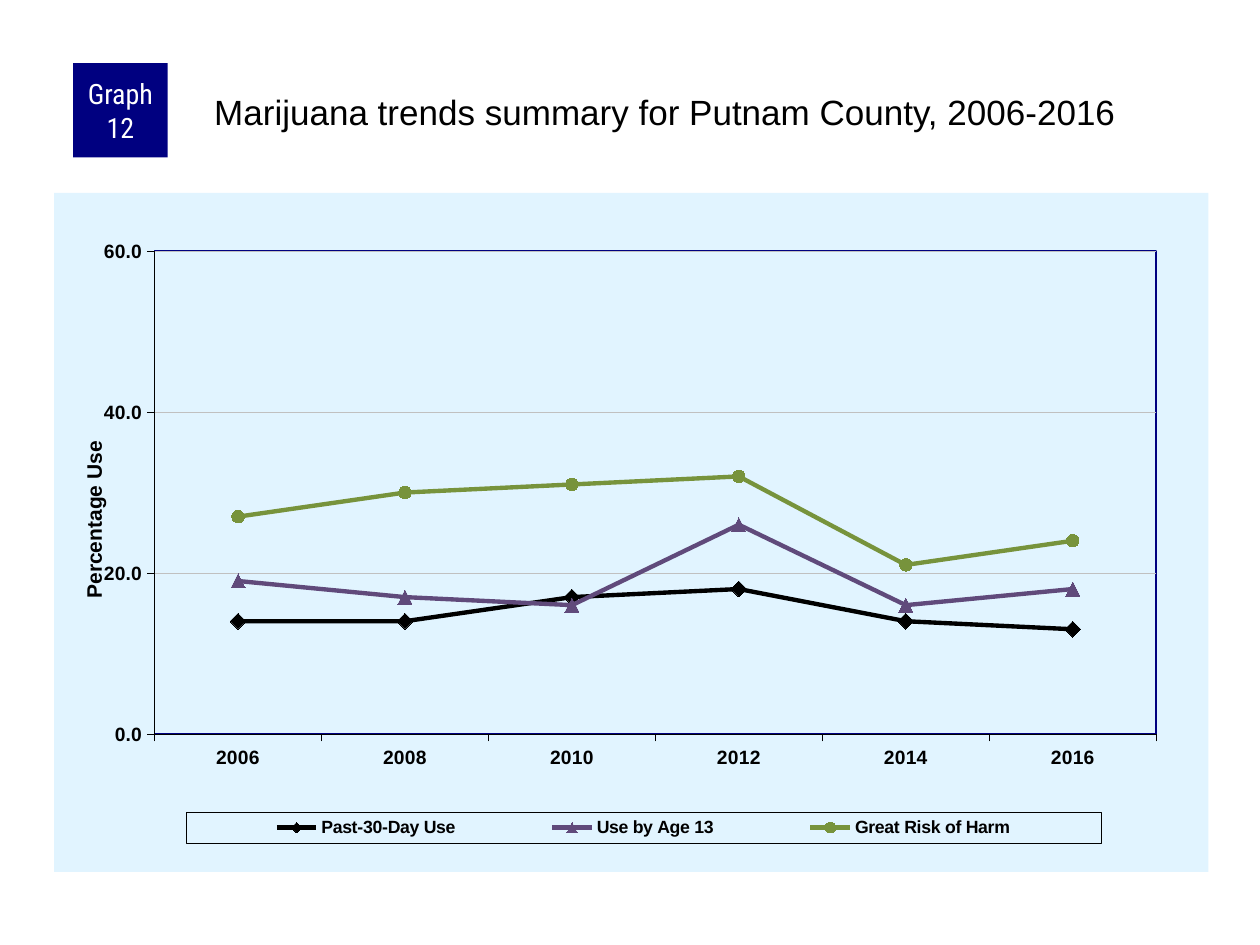
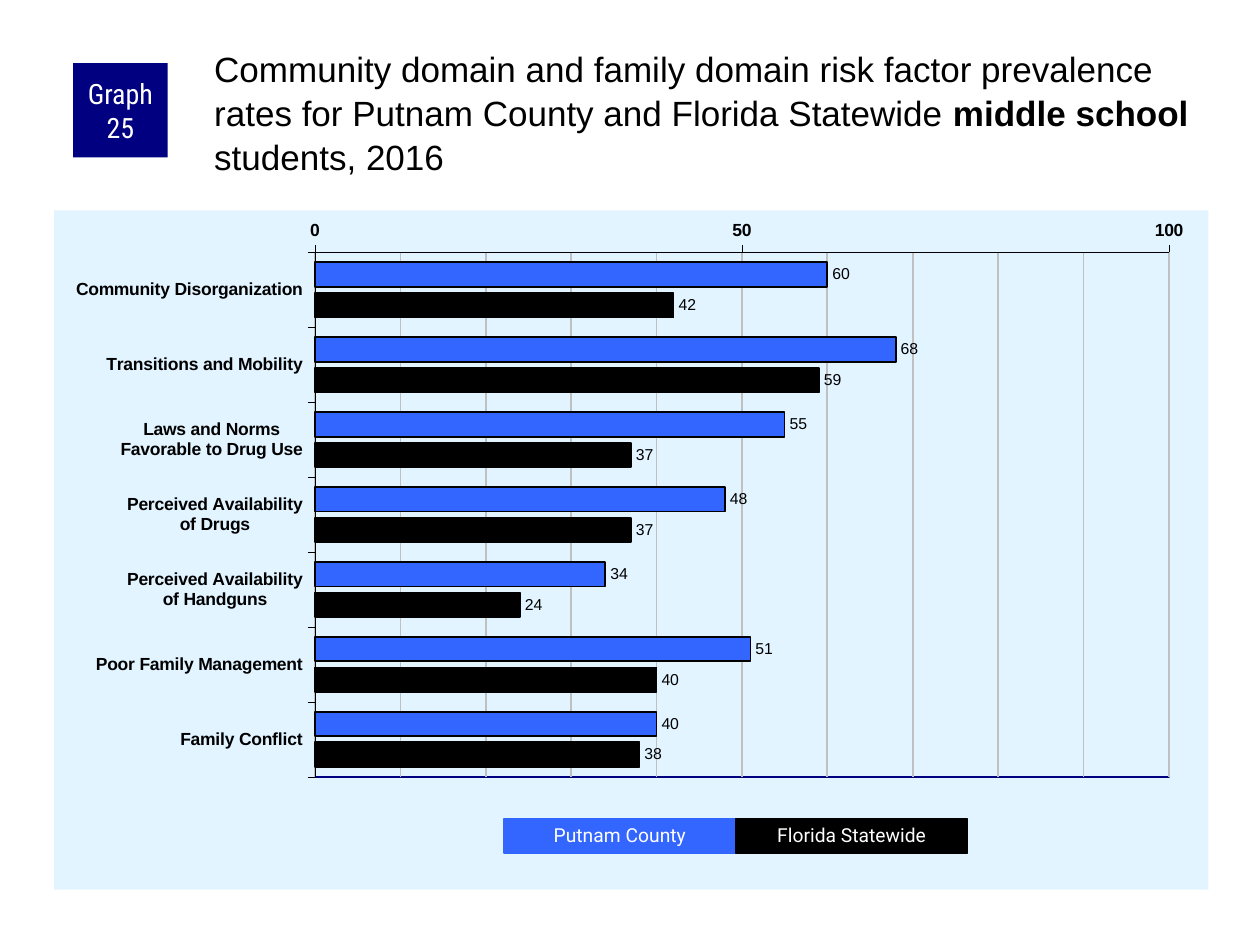
from dataclasses import dataclass

from pptx import Presentation
from pptx.chart.data import CategoryChartData
from pptx.dml.color import RGBColor
from pptx.enum.chart import (XL_AXIS_CROSSES, XL_CHART_TYPE, XL_LABEL_POSITION,
                             XL_LEGEND_POSITION, XL_MARKER_STYLE, XL_TICK_MARK)
from pptx.enum.shapes import MSO_SHAPE
from pptx.enum.text import MSO_ANCHOR, MSO_AUTO_SIZE, PP_ALIGN
from pptx.oxml import parse_xml
from pptx.oxml.ns import nsdecls, qn
from pptx.util import Inches, Pt

LINE_CHART = XL_CHART_TYPE.LINE_MARKERS
BAR_CHART = XL_CHART_TYPE.BAR_CLUSTERED
CROSS_AT_MAXIMUM = XL_AXIS_CROSSES.MAXIMUM
LABEL_OUTSIDE = XL_LABEL_POSITION.OUTSIDE_END
LEGEND_RIGHT = XL_LEGEND_POSITION.RIGHT
DIAMOND = XL_MARKER_STYLE.DIAMOND
TRIANGLE = XL_MARKER_STYLE.TRIANGLE
CIRCLE = XL_MARKER_STYLE.CIRCLE
TICK_OUT = XL_TICK_MARK.OUTSIDE
TICK_NONE = XL_TICK_MARK.NONE
RECTANGLE = MSO_SHAPE.RECTANGLE
TOP = MSO_ANCHOR.TOP
MIDDLE = MSO_ANCHOR.MIDDLE
LEFT = PP_ALIGN.LEFT
CENTER = PP_ALIGN.CENTER
NO_FIT = MSO_AUTO_SIZE.NONE
GROW = MSO_AUTO_SIZE.SHAPE_TO_FIT_TEXT
TITLE_ONLY = 5


@dataclass(frozen=True)
class Theme:
    navy: str = "000080"
    panel: str = "E1F4FF"
    black: str = "000000"
    white: str = "FFFFFF"
    grid: str = "C0C0C0"
    purple: str = "604A7B"
    green: str = "77933C"
    blue: str = "3366FF"
    body_font: str = "Arial"
    badge_font: str = "Roboto Condensed"
    key_font: str = "Roboto"
    title_size: float = 20
    badge_size: float = 16
    axis_title_size: float = 12
    line_axis_size: float = 11
    key_size: float = 11
    legend_size: float = 10.1
    bar_axis_size: float = 10
    label_size: float = 9


THEME = Theme()


def style_font(font, size, color=THEME.black, name=THEME.body_font, bold=False):
    font.size = Pt(size)
    font.name = name
    font.bold = bold
    font.color.rgb = RGBColor.from_string(color)


def style_line(line, color, width):
    line.color.rgb = RGBColor.from_string(color)
    line.width = Pt(width)


def style_fill(fill, color):
    fill.solid()
    fill.fore_color.rgb = RGBColor.from_string(color)


def add_span(para, text, size, color, name, bold=False):
    span = para.add_run()
    span.text = text
    style_font(span.font, size, color, name, bold)


def add_page(deck, number, title_top, title_spans):
    page = deck.slides.add_slide(deck.slide_layouts[TITLE_ONLY])
    title = page.shapes.title
    title.left, title.top = Inches(1.67), Inches(title_top)
    title.width, title.height = Inches(7.92), Inches(0.83)
    frame = title.text_frame
    frame.word_wrap = True
    frame.auto_size = NO_FIT
    frame.vertical_anchor = TOP
    frame.margin_left = frame.margin_top = Inches(0.03)
    frame.margin_right = frame.margin_bottom = 0
    para = frame.paragraphs[0]
    para.alignment = LEFT
    para.line_spacing = 1.05
    for text, bold in title_spans:
        add_span(para, text, THEME.title_size, THEME.black, THEME.body_font, bold)
    add_badge(page, f"Graph {number}")
    return page


def add_box(page, left, top, width, height, color):
    box = page.shapes.add_shape(RECTANGLE, Inches(left), Inches(top),
                                Inches(width), Inches(height))
    box.shadow.inherit = False
    style_fill(box.fill, color)
    frame = box.text_frame
    frame.word_wrap = True
    frame.vertical_anchor = MIDDLE
    frame.paragraphs[0].alignment = CENTER
    return box


def add_badge(page, text):
    badge = add_box(page, 0.58, 0.5, 0.75, 0.75, THEME.navy)
    badge.line.fill.background()
    frame = badge.text_frame
    frame.margin_left = frame.margin_right = Inches(0.05)
    frame.margin_top = frame.margin_bottom = 0
    add_span(frame.paragraphs[0], text, THEME.badge_size, THEME.white, THEME.badge_font)


def add_series_key(page, left, text, color):
    key = add_box(page, left, 6.5, 1.84, 0.27, color)
    style_line(key.line, color, 0.75)
    key.text_frame.auto_size = GROW
    para = key.text_frame.paragraphs[0]
    para.line_spacing = 0.9
    add_span(para, text, THEME.key_size, THEME.white, THEME.key_font)


def set_layout(element, index, left, top, width=None, height=None, inner=False):
    for old in element.findall(qn("c:layout")):
        element.remove(old)
    target = '<c:layoutTarget val="inner"/>' if inner else ""
    modes = '<c:xMode val="edge"/><c:yMode val="edge"/>'
    sizes = zip("xywh", (left, top, width, height))
    values = "".join(f'<c:{tag} val="{value}"/>' for tag, value in sizes
                     if value is not None)
    element.insert(index, parse_xml(
        f'<c:layout {nsdecls("c")}><c:manualLayout>{target}{modes}{values}'
        '</c:manualLayout></c:layout>'))


def shape_properties(fill=None, line=None, width=1):
    def solid(color):
        if color is None:
            return "<a:noFill/>"
        return f'<a:solidFill><a:srgbClr val="{color}"/></a:solidFill>'

    return parse_xml(f'<c:spPr {nsdecls("c", "a")}>{solid(fill)}'
                     f'<a:ln w="{Pt(width)}">{solid(line)}</a:ln></c:spPr>')


def add_panel_chart(page, kind, top, categories, series, plot):
    data = CategoryChartData(number_format="0")
    data.categories = categories
    for name, values in series:
        data.add_series(name, values)
    chart = page.shapes.add_chart(kind, Inches(0.43), Inches(top), Inches(9.16),
                                  Inches(5.39), data).chart
    chart.has_title = False
    chart.has_legend = False
    style_font(chart.font, THEME.label_size)
    body = chart.element.find(qn("c:chart"))
    body.addnext(shape_properties(THEME.panel))
    plot_area = body.find(qn("c:plotArea"))
    set_layout(plot_area, 0, *plot, inner=True)
    plot_area.append(shape_properties(line=THEME.navy))
    return chart


def style_axes(chart, size, maximum, major, number_format, grid_width):
    for axis in (chart.category_axis, chart.value_axis):
        axis.major_tick_mark = TICK_OUT
        axis.minor_tick_mark = TICK_NONE
        style_font(axis.tick_labels.font, size, bold=True)
        style_line(axis.format.line, THEME.black, 0.25)
    scale = chart.value_axis
    scale.minimum_scale, scale.maximum_scale = 0, maximum
    scale.major_unit = major
    scale.tick_labels.number_format = number_format
    scale.tick_labels.number_format_is_linked = False
    scale.has_major_gridlines = True
    style_line(scale.major_gridlines.format.line, THEME.grid, grid_width)


def add_minor_gridlines(axis, unit):
    axis.minor_unit = unit
    axis.has_minor_gridlines = True
    gridlines = axis._element.find(qn("c:minorGridlines"))
    gridlines.append(shape_properties(line=THEME.grid))


def add_axis_title(axis, text):
    axis.has_title = True
    para = axis.axis_title.text_frame.paragraphs[0]
    add_span(para, text, THEME.axis_title_size, THEME.black, THEME.body_font, True)
    set_layout(axis.axis_title._element, 1, 0.02, 0.36)


def add_legend(chart):
    chart.has_legend = True
    legend = chart.legend
    legend.position = LEGEND_RIGHT
    legend.include_in_layout = False
    style_font(legend.font, THEME.legend_size, bold=True)
    set_layout(legend._element, 1, 0.114, 0.912, 0.793, 0.046)
    legend._element.find(qn("c:overlay")).addnext(
        shape_properties(line=THEME.black, width=0.25))


def add_trend_chart(page):
    years = [str(year) for year in range(2006, 2017, 2)]
    series = [("Past-30-Day Use", (14, 14, 17, 18, 14, 13)),
              ("Use by Age 13", (19, 17, 16, 26, 16, 18)),
              ("Great Risk of Harm", (27, 30, 31, 32, 21, 24))]
    looks = [(THEME.black, DIAMOND, 9), (THEME.purple, TRIANGLE, 8),
             (THEME.green, CIRCLE, 7)]
    chart = add_panel_chart(page, LINE_CHART, 1.53, years, series,
                            (0.087, 0.086, 0.868, 0.711))
    style_axes(chart, THEME.line_axis_size, 60, 20, "0.0", 0.25)
    add_axis_title(chart.value_axis, "Percentage Use")
    add_legend(chart)
    chart.plots[0].vary_by_categories = False
    for trend, (color, style, size) in zip(chart.series, looks):
        trend.smooth = False
        style_line(trend.format.line, color, 2.5)
        trend.marker.style = style
        trend.marker.size = size
        style_fill(trend.marker.format.fill, color)
        style_line(trend.marker.format.line, color, 0.75)


def add_risk_chart(page, regions):
    factors = ["Community Disorganization", "Transitions and Mobility",
               "Laws and Norms\nFavorable to Drug Use",
               "Perceived Availability\nof Drugs",
               "Perceived Availability\nof Handguns",
               "Poor Family Management", "Family Conflict"]
    series = [("Series 1", (60, 68, 55, 48, 34, 51, 40)),
              ("Series 2", (42, 59, 37, 37, 24, 40, 38))]
    chart = add_panel_chart(page, BAR_CHART, 1.67, factors, series,
                            (0.226, 0.062, 0.74, 0.772))
    style_axes(chart, THEME.bar_axis_size, 100, 50, "0", 1)
    chart.category_axis.reverse_order = True
    chart.category_axis.crosses = CROSS_AT_MAXIMUM
    add_minor_gridlines(chart.value_axis, 10)
    plot = chart.plots[0]
    plot.vary_by_categories = False
    plot.gap_width, plot.overlap = 80, -25
    for bars, (_, color) in zip(chart.series, regions):
        style_fill(bars.format.fill, color)
        style_line(bars.format.line, THEME.black, 1)
        labels = bars.data_labels
        labels.show_value = True
        labels.position = LABEL_OUTSIDE
        style_font(labels.font, THEME.label_size)


def main():
    deck = Presentation()
    deck.slide_width, deck.slide_height = Inches(10), Inches(7.5)

    page = add_page(deck, 12, 0.67, [
        ("Marijuana trends summary for Putnam County, 2006-2016", False)])
    add_trend_chart(page)

    page = add_page(deck, 25, 0.33, [
        ("Community domain and family domain risk factor prevalence rates "
         "for Putnam County and Florida Statewide ", False),
        ("middle school", True),
        (" students, 2016", False)])
    regions = [("Putnam County", THEME.blue), ("Florida Statewide", THEME.black)]
    add_risk_chart(page, regions)
    for index, (region, color) in enumerate(regions):
        add_series_key(page, 4 + 1.84 * index, region, color)

    deck.save("out.pptx")


if __name__ == "__main__":
    main()
